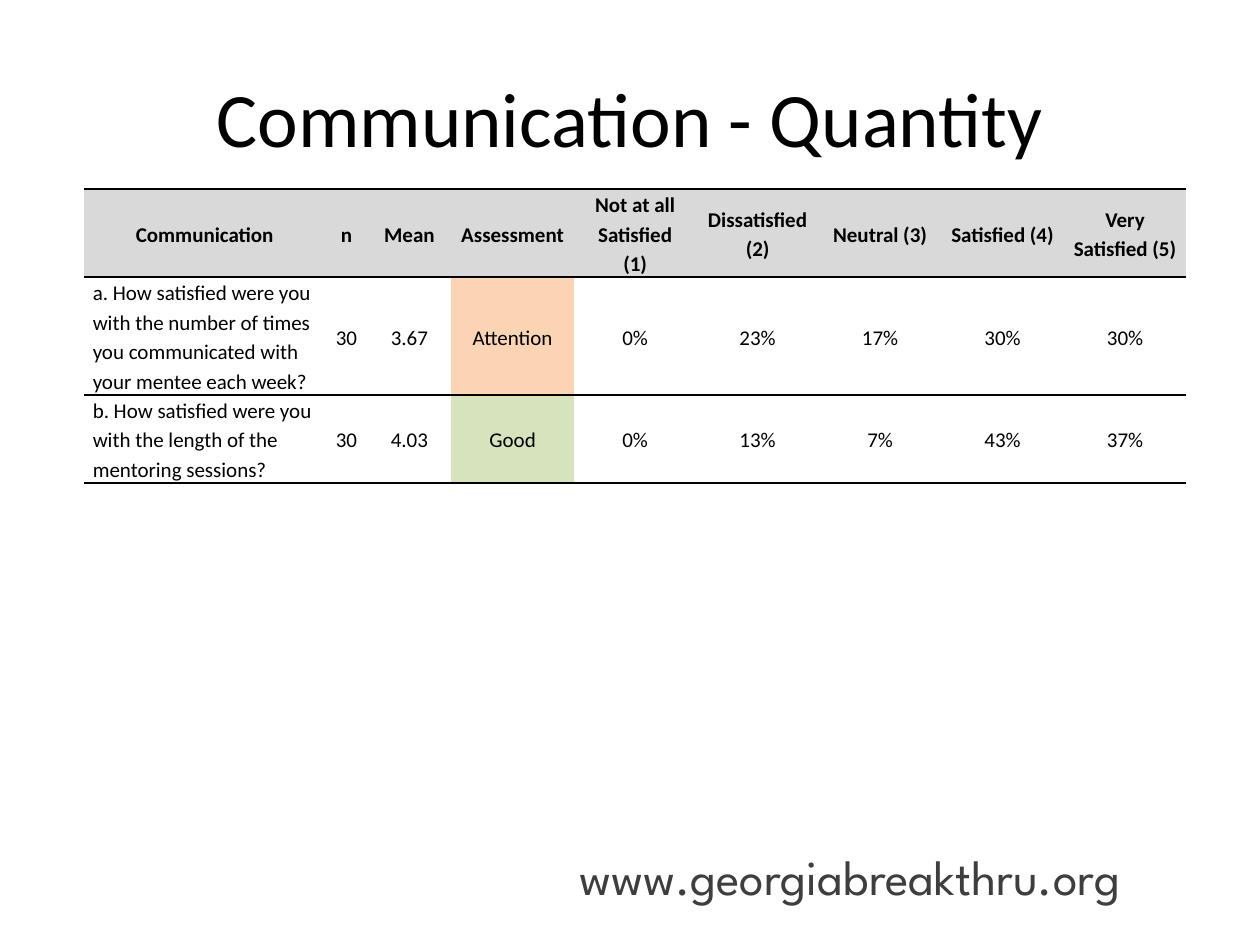
import pptx
import pptx.dml.color
import pptx.enum.text
import pptx.oxml
import pptx.oxml.ns
import pptx.util
from dataclasses import dataclass

ALIGN = pptx.enum.text.PP_ALIGN
ANCHOR = pptx.enum.text.MSO_ANCHOR


@dataclass(frozen=True)
class Theme:
    body: str = "Calibri"
    brand: str = "League Spartan"
    ink: str = "000000"
    soft: str = "3E3E3E"
    head: str = "D9D9D9"
    warn: str = "FBD4B4"
    good: str = "D6E3BC"
    big: int = 44
    site: int = 28
    small: int = 12
    rule: float = 1


class Deck:
    """Draws styled elements on a slide grid of 120 columns by 90 rows."""

    def __init__(self, theme):
        self.theme = theme
        self.prs = pptx.Presentation()
        self.prs.slide_width = pptx.util.Inches(10)
        self.prs.slide_height = pptx.util.Inches(7.5)
        self.slide = self.prs.slides.add_slide(self.prs.slide_layouts[6])

    def span(self, count):
        return round(count * self.prs.slide_width / 120)

    def label(self, frame, text, size, color, font, bold=False,
              align=ALIGN.LEFT, space=1.0):
        frame.text = text
        for para in frame.paragraphs:
            para.alignment, para.line_spacing = align, space
            look = {"size": pptx.util.Pt(size), "name": font, "bold": bold}
            for key, value in look.items():
                setattr(para.font, key, value)
            para.font.color.rgb = pptx.dml.color.RGBColor.from_string(color)

    def text(self, area, text, anchor=ANCHOR.TOP, **style):
        box = self.slide.shapes.add_textbox(*map(self.span, area))
        box.text_frame.word_wrap = True
        box.text_frame.vertical_anchor = anchor
        self.label(box.text_frame, text, **style)

    def edge(self, cell):
        props = cell._tc.get_or_add_tcPr()
        space = pptx.oxml.ns.nsdecls("a")
        ink = f'<a:solidFill><a:srgbClr val="{self.theme.ink}"/></a:solidFill>'
        width = pptx.util.Pt(self.theme.rule)
        for spot, side in enumerate("LRTB"):
            paint = ink if side in "TB" else "<a:noFill/>"
            props.insert(spot, pptx.oxml.parse_xml(
                f'<a:ln{side} {space} w="{width}">{paint}</a:ln{side}>'))

    def cell(self, cell, text, fill, bold, align, anchor):
        pad = pptx.util.Inches(0.07)
        look = {"margin_left": pad, "margin_right": pad, "margin_top": 0,
                "margin_bottom": 0, "vertical_anchor": anchor}
        for key, value in look.items():
            setattr(cell, key, value)
        if fill:
            cell.fill.solid()
            cell.fill.fore_color.rgb = pptx.dml.color.RGBColor.from_string(fill)
        else:
            cell.fill.background()
        self.edge(cell)
        self.label(cell.text_frame, text, self.theme.small, self.theme.ink,
                   self.theme.body, bold, align, 1.15)

    def table(self, left, top, cols, rows, data, tints):
        area = map(self.span, (left, top, sum(cols), sum(rows)))
        grid = self.slide.shapes.add_table(len(rows), len(cols), *area).table
        grid.first_row = grid.horz_banding = False
        for col, width in zip(grid.columns, cols):
            col.width = self.span(width)
        for row, height in zip(grid.rows, rows):
            row.height = self.span(height)
        for r, line in enumerate(data):
            for c, text in enumerate(line):
                head, ask = r == 0, r > 0 and c == 0
                fill = self.theme.head if head else tints.get(text)
                self.cell(grid.cell(r, c), text, fill, head,
                          ALIGN.LEFT if ask else ALIGN.CENTER,
                          ANCHOR.BOTTOM if ask else ANCHOR.MIDDLE)

    def save(self):
        self.prs.save("out.pptx")


def main():
    theme = Theme()
    deck = Deck(theme)
    deck.text((6, 3.6, 108, 15), "Communication - Quantity", ANCHOR.MIDDLE,
              size=theme.big, color=theme.ink, font=theme.body,
              align=ALIGN.CENTER)
    data = [
        ["Communication", "n", "Mean", "Assessment",
         "Not at all Satisfied\n(1)", "Dissatisfied (2)", "Neutral (3)",
         "Satisfied (4)", "Very Satisfied (5)"],
        ["a. How satisfied were you with the number of times you "
         "communicated with your mentee each week?",
         "30", "3.67", "Attention", "0%", "23%", "17%", "30%", "30%"],
        ["b. How satisfied were you with the length of the mentoring sessions?",
         "30", "4.03", "Good", "0%", "13%", "7%", "43%", "37%"],
    ]
    deck.table(8, 18, [23, 4, 8] + [70 / 6] * 6, [8.4, 11.2, 8.4], data,
               {"Attention": theme.warn, "Good": theme.good})
    deck.text((54, 80, 64, 4.8), "www.georgiabreakthru.org",
              size=theme.site, color=theme.soft, font=theme.brand)
    deck.save()


if __name__ == "__main__":
    main()
